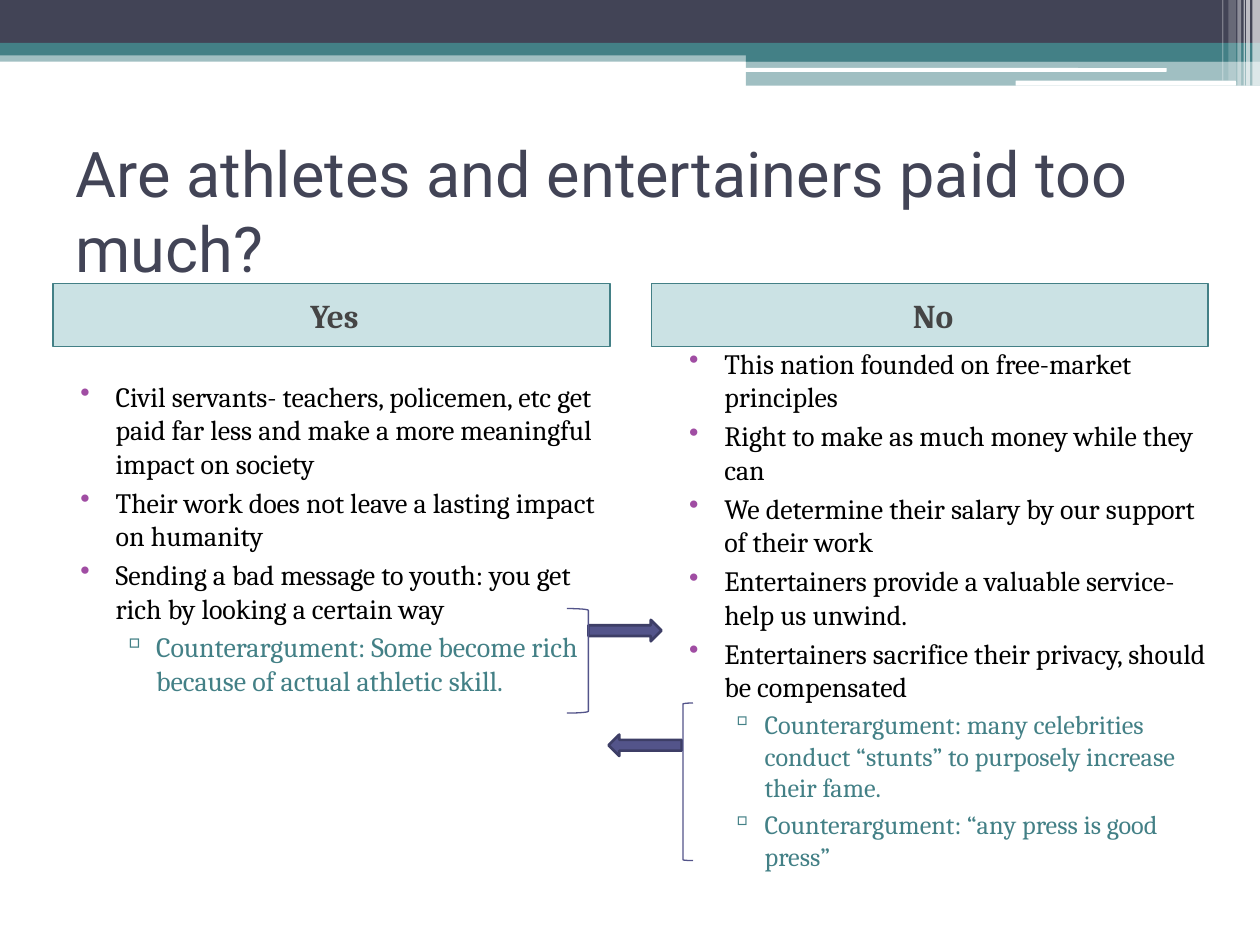
"""Build a two-column debate slide on the pay of athletes and entertainers."""
from lxml import etree
from pptx import Presentation
from pptx import util as u
from pptx.dml.color import RGBColor
from pptx.enum import shapes, text
from pptx.oxml.ns import qn

COLORS = {
    "navy": "424456", "teal": "438086", "white": "FFFFFF", "header": "328E97",
    "gray": "454545", "black": "000000", "purple": "A04DA3",
    "indigo": "53548A", "indigo_dark": "3D3E66",
}
KIND = shapes.MSO_SHAPE
TITLE = "Are athletes and entertainers paid too much?"
TITLE_BOX = (0.5, 1.25, 9.33, 0.83)

BANNER = [
    (KIND.RECTANGLE, (0, 0.4, 10, 0.09), "teal", 50),
    (KIND.RECTANGLE, (0, 0, 10, 0.34), "navy", 100),
    (KIND.RECTANGLE, (0, 0.34, 10, 0.1), "teal", 100),
    (KIND.RECTANGLE, (5.92, 0.39, 4.08, 0.1), "teal", 100),
    (KIND.RECTANGLE, (5.92, 0.48, 4.08, 0.2), "teal", 50),
    (KIND.ROUNDED_RECTANGLE, (5.91, 0.54, 3.35, 0.03), "white", 100),
    (KIND.ROUNDED_RECTANGLE, (8.06, 0.64, 1.75, 0.04), "white", 100),
]
# left, width, height, opacity
STRIPES = [
    (9.94, 0.06, 0.68, 65), (9.89, 0.03, 0.68, 65), (9.87, 0.01, 0.68, 60),
    (9.82, 0.03, 0.68, 40), (9.75, 0.06, 0.64, 20), (9.7, 0.01, 0.64, 30),
]
COLUMNS = [
    {
        "heading": "Yes", "header_box": (0.42, 2.25, 4.42, 0.5),
        "body_box": (0.42, 2.96, 4.42, 4.25), "counter_size": 16,
        "points": [
            "Civil servants- teachers, policemen, etc get paid far less and make "
            "a more meaningful impact on society",
            "Their work does not leave a lasting impact on humanity",
            "Sending a bad message to youth: you get rich by looking a certain way",
        ],
        "counters": [
            "Counterargument: Some become rich because of actual athletic skill.",
        ],
    },
    {
        "heading": "No", "header_box": (5.17, 2.25, 4.42, 0.5),
        "body_box": (5.25, 2.7, 4.42, 4.38), "counter_size": 15,
        "points": [
            "This nation founded on free-market principles",
            "Right to make as much money while they can",
            "We determine their salary by our support of their work",
            "Entertainers provide a valuable service- help us unwind.",
            "Entertainers sacrifice their privacy, should be compensated",
        ],
        "counters": [
            "Counterargument: many celebrities conduct “stunts” to purposely "
            "increase their fame.",
            "Counterargument: “any press is good press”",
        ],
    },
]
LEVELS = [
    {"indent": (0.4, -0.28), "bullet": "•", "bullet_color": "purple", "color": "black"},
    {"indent": (0.72, -0.27), "bullet": "▫", "bullet_color": "teal", "color": "teal"},
]
# kind, box, rotation, fill, line, line width
MARKERS = [
    (KIND.RIGHT_ARROW, (4.83, 5.83, 0.58, 0.17), 180, "indigo", "indigo_dark", 1.5),
    (KIND.RIGHT_ARROW, (4.67, 4.92, 0.58, 0.17), 0, "indigo", "indigo_dark", 1.5),
    (KIND.RIGHT_BRACKET, (4.5, 4.83, 0.17, 0.83), 0, None, "indigo", 0.75),
    (KIND.LEFT_BRACKET, (5.42, 5.58, 0.08, 1.25), 0, None, "indigo", 0.75),
]


def rgb(name):
    return RGBColor.from_string(COLORS[name])


def inches(box):
    return [u.Inches(value) for value in box]


def set_values(target, values):
    for name, value in values.items():
        setattr(target, name, value)


def add_shape(slide, kind, box, fill=None, opacity=100, line=None, width=1):
    shape = slide.shapes.add_shape(kind, *inches(box))
    shape.shadow.inherit = False
    if fill:
        shape.fill.solid()
        shape.fill.fore_color.rgb = rgb(fill)
        if opacity < 100:
            color = shape.fill._xPr.find(qn("a:solidFill"))[0]
            etree.SubElement(color, qn("a:alpha"), val=str(opacity * 1000))
    else:
        shape.fill.background()
    if line:
        shape.line.color.rgb = rgb(line)
        shape.line.width = u.Pt(width)
    else:
        shape.line.fill.background()
    return shape


def write(paragraph, words, size, color, font="Cambria", bold=False):
    run = paragraph.add_run()
    run.text = words
    set_values(run.font, {"name": font, "size": u.Pt(size), "bold": bold})
    run.font.color.rgb = rgb(color)


def set_indent(paragraph, left, first):
    properties = paragraph._p.get_or_add_pPr()
    properties.set("marL", str(u.Inches(left)))
    properties.set("indent", str(u.Inches(first)))
    return properties


def add_bullet(paragraph, level):
    properties = set_indent(paragraph, *level["indent"])
    color = etree.SubElement(properties, qn("a:buClr"))
    etree.SubElement(color, qn("a:srgbClr"), val=COLORS[level["bullet_color"]])
    etree.SubElement(properties, qn("a:buChar"), char=level["bullet"])


def add_title(slide):
    title = slide.shapes.title
    set_values(title, dict(zip(("left", "top", "width", "height"), inches(TITLE_BOX))))
    set_values(title.text_frame, {
        "word_wrap": True, "auto_size": text.MSO_AUTO_SIZE.NONE,
        "vertical_anchor": text.MSO_ANCHOR.MIDDLE,
    })
    paragraph = title.text_frame.paragraphs[0]
    paragraph.alignment = text.PP_ALIGN.LEFT
    write(paragraph, TITLE, 36, "navy", "Roboto")


def add_column(slide, column):
    header = add_shape(slide, KIND.RECTANGLE, column["header_box"], "header", 25, "teal")
    header.text_frame.vertical_anchor = text.MSO_ANCHOR.MIDDLE
    paragraph = header.text_frame.paragraphs[0]
    set_values(paragraph, {"alignment": text.PP_ALIGN.CENTER, "space_before": u.Pt(3)})
    set_indent(paragraph, 0.05, 0)
    write(paragraph, column["heading"], 19, "gray", bold=True)

    frame = slide.shapes.add_textbox(*inches(column["body_box"])).text_frame
    frame.word_wrap = True
    lines = [(0, 16, words) for words in column["points"]]
    lines += [(1, column["counter_size"], words) for words in column["counters"]]
    for index, (depth, size, words) in enumerate(lines):
        paragraph = frame.add_paragraph() if index else frame.paragraphs[0]
        set_values(paragraph, {"level": depth, "space_before": u.Pt(3)})
        add_bullet(paragraph, LEVELS[depth])
        write(paragraph, words, size, LEVELS[depth]["color"])


def main():
    presentation = Presentation()
    set_values(presentation, {"slide_width": u.Inches(10), "slide_height": u.Inches(7.5)})
    slide = presentation.slides.add_slide(presentation.slide_layouts[5])
    for kind, box, fill, opacity in BANNER:
        add_shape(slide, kind, box, fill, opacity)
    for left, width, height, opacity in STRIPES:
        add_shape(slide, KIND.RECTANGLE, (left, 0, width, height), "white", opacity)
    for column in COLUMNS:
        add_column(slide, column)
    add_title(slide)
    for kind, box, rotation, fill, line, width in MARKERS:
        add_shape(slide, kind, box, fill, line=line, width=width).rotation = rotation
    presentation.save("out.pptx")


if __name__ == "__main__":
    main()
